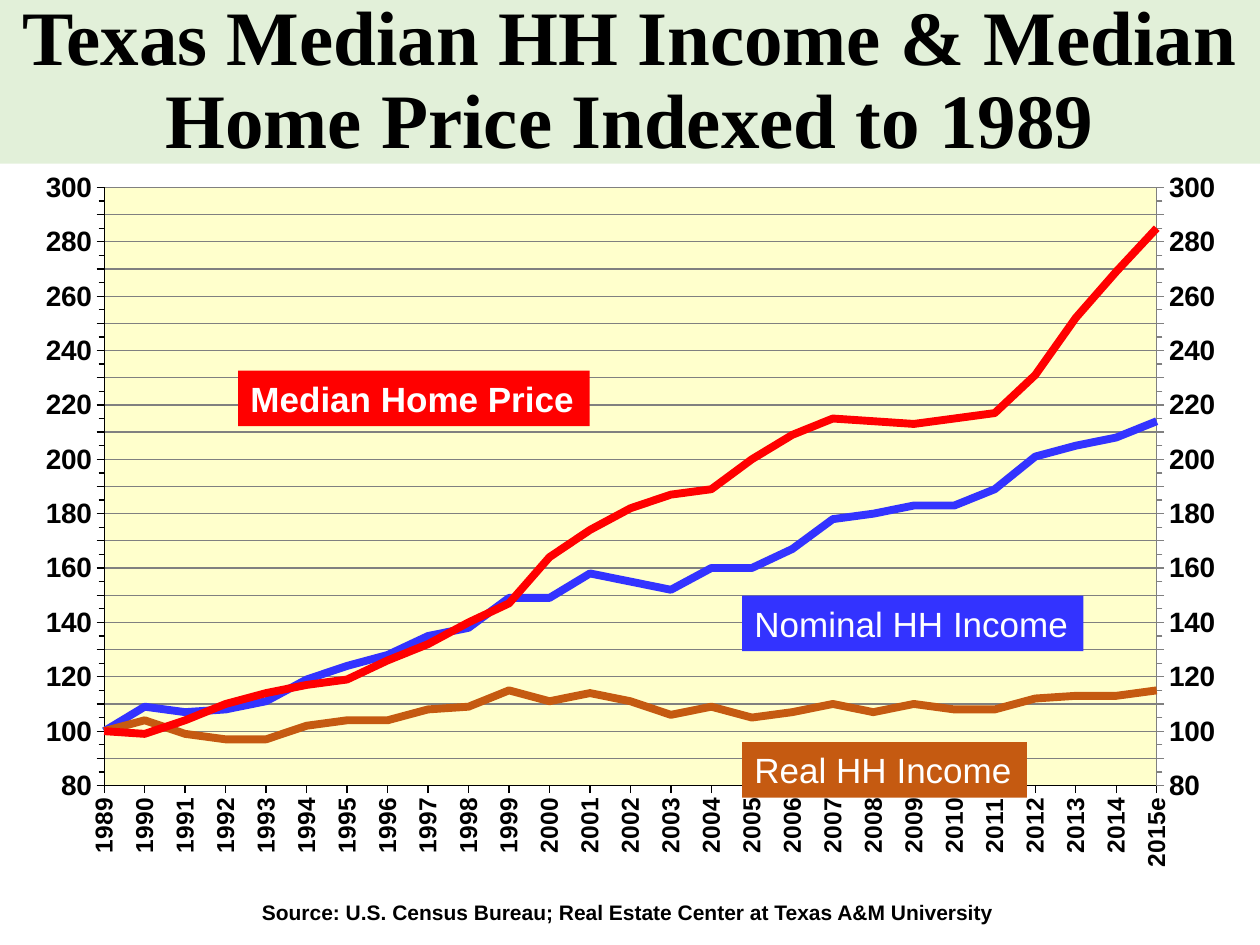
from copy import deepcopy

from pptx import Presentation
from pptx.chart.data import CategoryChartData
from pptx.dml.color import RGBColor
from pptx.enum.chart import XL_CHART_TYPE, XL_MARKER_STYLE, XL_TICK_MARK
from pptx.enum.shapes import MSO_SHAPE
from pptx.enum.text import MSO_ANCHOR, MSO_AUTO_SIZE, PP_ALIGN
from pptx.oxml import parse_xml
from pptx.oxml.ns import nsdecls
from pptx.util import Cm, Pt

BLACK, WHITE, GREY = "000000", "FFFFFF", "808080"
BLUE, BROWN, RED = "3333FF", "C55A11", "FF0000"
YEARS = [str(year) for year in range(1989, 2015)] + ["2015e"]
SERIES = [
    ("Nominal HH Income", BLUE,
     [100, 109, 107, 108, 111, 119, 124, 128, 135, 138, 149, 149, 158, 155,
      152, 160, 160, 167, 178, 180, 183, 183, 189, 201, 205, 208, 214]),
    ("Real HH Income", BROWN,
     [100, 104, 99, 97, 97, 102, 104, 104, 108, 109, 115, 111, 114, 111,
      106, 109, 105, 107, 110, 107, 110, 108, 108, 112, 113, 113, 115]),
    ("Median Home Price", RED,
     [100, 99, 104, 110, 114, 117, 119, 126, 132, 140, 147, 164, 174, 182,
      187, 189, 200, 209, 215, 214, 213, 215, 217, 231, 252, 269, 285]),
]
LABELS = [
    ("Real HH Income", (14.96, 14.96, 5.74, 1.12), BROWN, False),
    ("Nominal HH Income", (14.96, 12.01, 6.88, 1.12), BLUE, False),
    ("Median Home Price", (4.8, 7.47, 7.09, 1.12), RED, True),
]


def color(value):
    return RGBColor.from_string(value)


def chart_xml(text):
    return parse_xml(text.replace(">", f" {nsdecls('c', 'a')}>", 1))


class SlideBuilder:
    """Holds the style and the current slide, and adds each kind of element."""

    font = "Arial"
    title_font = "Times New Roman"

    def __init__(self, slide):
        self.slide = slide

    def style_font(self, font, size, value, bold=False, name=None):
        font.name, font.size, font.bold = name or self.font, Pt(size), bold
        font.color.rgb = color(value)

    def add_text(self, frame, text, size, value, bold, name=None):
        paragraph = frame.paragraphs[0]
        run = paragraph.add_run()
        run.text = text
        self.style_font(run.font, size, value, bold, name)
        return paragraph

    def box(self, place, fill):
        shape = self.slide.shapes.add_shape(MSO_SHAPE.RECTANGLE, *map(Cm, place))
        shape.shadow.inherit = False
        shape.fill.solid()
        shape.fill.fore_color.rgb = color(fill)
        shape.line.fill.background()
        shape.text_frame.vertical_anchor = MSO_ANCHOR.MIDDLE
        return shape

    def title(self, text, place, fill):
        frame = self.box(place, fill).text_frame
        frame.word_wrap = True
        paragraph = self.add_text(frame, text, 44, BLACK, True, self.title_font)
        paragraph.alignment = PP_ALIGN.CENTER
        paragraph.line_spacing = 0.9

    def fitted_text(self, shape, text, size, value, bold):
        frame = shape.text_frame
        frame.word_wrap = False
        frame.auto_size = MSO_AUTO_SIZE.SHAPE_TO_FIT_TEXT
        self.add_text(frame, text, size, value, bold).alignment = PP_ALIGN.LEFT

    def label(self, text, place, fill, bold):
        self.fitted_text(self.box(place, fill), text, 20, WHITE, bold)

    def source(self, text, place):
        shape = self.slide.shapes.add_textbox(*map(Cm, place))
        self.fitted_text(shape, text, 12, BLACK, True)

    def axis(self, axis, size):
        axis.major_tick_mark = XL_TICK_MARK.OUTSIDE
        self.style_font(axis.tick_labels.font, size, BLACK, True)
        axis.format.line.color.rgb = color(BLACK)
        axis.format.line.width = Pt(0.75)

    def line_chart(self, place):
        data = CategoryChartData(number_format="0")
        data.categories = YEARS
        for name, _, values in SERIES:
            data.add_series(name, values)
        chart = self.slide.shapes.add_chart(
            XL_CHART_TYPE.LINE, *map(Cm, place), data).chart
        chart.has_legend = chart.has_title = False
        self.style_font(chart.font, 18, BLACK, name="Calibri")
        chart.plots[0].vary_by_categories = False
        for series, (_, value, _) in zip(chart.plots[0].series, SERIES):
            series.smooth = False
            series.marker.style = XL_MARKER_STYLE.NONE
            series.format.line.color.rgb = color(value)
            series.format.line.width = Pt(4.5)

        self.axis(chart.category_axis, 14)
        value_axis = chart.value_axis
        self.axis(value_axis, 16)
        value_axis.minimum_scale, value_axis.maximum_scale = 80, 300
        value_axis.major_unit, value_axis.minor_unit = 10, 5
        value_axis.minor_tick_mark = XL_TICK_MARK.OUTSIDE
        value_axis.tick_labels.number_format = "0"
        value_axis.tick_labels.number_format_is_linked = False
        value_axis.has_major_gridlines = True
        grid = value_axis.major_gridlines.format.line
        grid.color.rgb, grid.width = color(GREY), Pt(0.75)
        self.plot_area(chart.element.xpath(".//c:plotArea")[0])

    def plot_area(self, area):
        category_axis, value_axis = area.xpath("c:catAx | c:valAx")
        category_axis.xpath("c:txPr/a:bodyPr")[0].set("rot", "-5400000")
        for old in area.xpath("c:layout | c:valAx/c:crossBetween"):
            old.getparent().remove(old)
        value_axis.xpath("c:crosses")[0].addnext(
            chart_xml('<c:crossBetween val="midCat"></c:crossBetween>'))
        self.right_axis(area, category_axis, value_axis)
        area.insert(0, chart_xml(
            '<c:layout><c:manualLayout><c:layoutTarget val="inner"/>'
            '<c:xMode val="edge"/><c:yMode val="edge"/><c:x val="0.068"/>'
            '<c:y val="0.041"/><c:w val="0.864"/><c:h val="0.826"/>'
            '</c:manualLayout></c:layout>'))
        area.append(chart_xml(
            '<c:spPr><a:solidFill><a:srgbClr val="FFFFCC"/></a:solidFill></c:spPr>'))

    def right_axis(self, area, category_axis, value_axis):
        plot = area.xpath("c:lineChart")[0]
        right_plot = deepcopy(plot)
        plot.remove(plot.xpath("c:ser")[-1])
        for series in right_plot.xpath("c:ser")[:-1]:
            right_plot.remove(series)
        plot.addnext(right_plot)
        right_category, right_value = deepcopy(category_axis), deepcopy(value_axis)
        right_value.remove(right_value.xpath("c:majorGridlines")[0])
        right_value.xpath("c:axPos")[0].set("val", "r")
        right_value.xpath("c:crosses")[0].set("val", "max")
        right_value.xpath("c:spPr//a:srgbClr")[0].set("val", GREY)
        right_category.xpath("c:delete")[0].set("val", "1")
        value_axis.addnext(right_value)
        right_value.addnext(right_category)
        ids = {axis.xpath("c:axId")[0].get("val"): number for axis, number in
               ((category_axis, "5001"), (value_axis, "5002"))}
        for part in (right_plot, right_category, right_value):
            for node in part.xpath("c:axId | c:crossAx"):
                node.set("val", ids[node.get("val")])


def main():
    presentation = Presentation()
    presentation.slide_width, presentation.slide_height = Cm(25.4), Cm(19.05)
    slide = presentation.slides.add_slide(presentation.slide_layouts[6])
    builder = SlideBuilder(slide)
    builder.title("Texas Median HH Income & Median Home Price Indexed to 1989",
                  (0, 0, 25.4, 3.3), "E2F0D9")
    builder.line_chart((0.43, 3.18, 24.56, 14.6))
    builder.source("Source: U.S. Census Bureau; Real Estate Center at Texas A&M University",
                   (5.03, 18.01, 15.39, 0.76))
    for label in LABELS:
        builder.label(*label)
    presentation.save("out.pptx")


if __name__ == "__main__":
    main()
